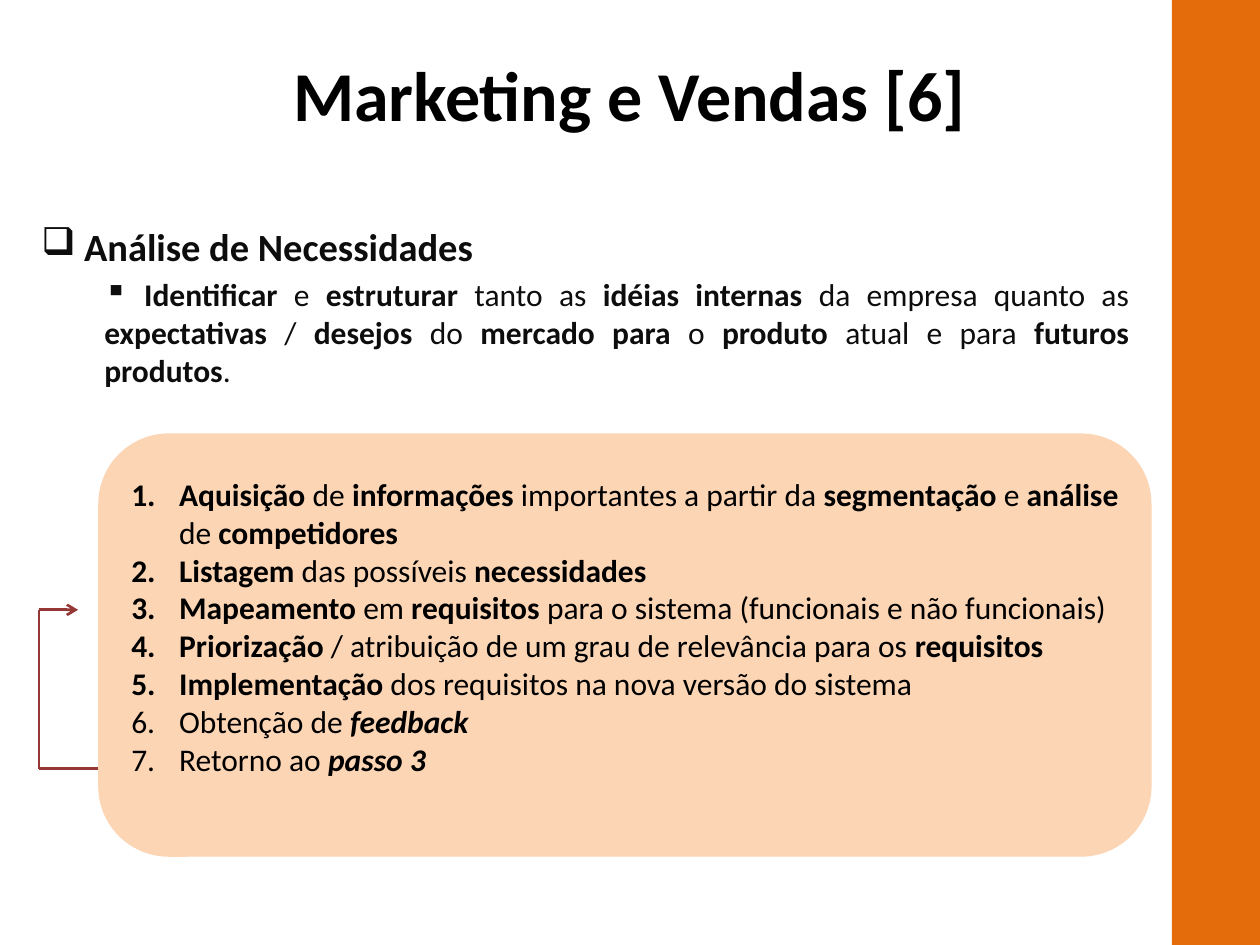
"""Builds the slide on needs analysis in marketing and sales."""
from lxml.etree import SubElement
from pptx import Presentation
from pptx.dml.color import RGBColor
from pptx.enum.shapes import MSO_CONNECTOR, MSO_SHAPE
from pptx.enum.text import MSO_ANCHOR, PP_ALIGN
from pptx.oxml.ns import qn
from pptx.util import Inches, Pt

COLORS = {"title": "000000", "body": "0D0D0D", "sidebar": "E46C0A",
          "panel": "FCD5B5", "loop": "953735"}


def write_rich(paragraph, text, size, color, italic=None):
    """Write text whose parts between asterisks are bold."""
    paragraph.alignment = PP_ALIGN.JUSTIFY
    paragraph.font.name = "Calibri"
    paragraph.font.size = Pt(size)
    paragraph.font.color.rgb = RGBColor.from_string(COLORS[color])
    for index, part in enumerate(text.split("*")):
        if part:
            run = paragraph.add_run()
            run.text = part
            run.font.name = "Calibri"
            run.font.size = Pt(size)
            run.font.color.rgb = RGBColor.from_string(COLORS[color])
            run.font.bold = index % 2 == 1
            run.font.italic = italic if index % 2 else None


def set_bullet(paragraph, tag, margin, indent, **attributes):
    """Give a paragraph its bullet and its indents in inches."""
    properties = paragraph._p.get_or_add_pPr()
    properties.set("marL", str(Inches(margin)))
    properties.set("indent", str(Inches(indent)))
    SubElement(properties, qn(tag), **attributes)


prs = Presentation()
prs.slide_width, prs.slide_height = Inches(10), Inches(7.5)
slide = prs.slides.add_slide(prs.slide_layouts[6])
shapes = slide.shapes

title = shapes.add_textbox(Inches(0.23), Inches(0.16), Inches(9.53), Inches(1.17)).text_frame
title.word_wrap = True
title.vertical_anchor = MSO_ANCHOR.MIDDLE
heading = title.paragraphs[0]
write_rich(heading, "*Marketing e Vendas [6]*", 40, "title")
heading.alignment = PP_ALIGN.CENTER

intro = shapes.add_textbox(Inches(0.23), Inches(1.72), Inches(8.83), Inches(1.5)).text_frame
intro.word_wrap = True
topic = intro.paragraphs[0]
write_rich(topic, "* Análise de Necessidades*", 22, "body")
set_bullet(topic, "a:buChar", 0, 0, char="❑")
goal = intro.add_paragraph()
goal.space_before = Pt(3.6)
write_rich(goal, " *Identificar* e *estruturar* tanto as *idéias internas* da empresa quanto as "
           "*expectativas* / *desejos* do *mercado para* o *produto* atual e para "
           "*futuros produtos*.", 18, "body")
set_bullet(goal, "a:buChar", 0.5, 0, char="▪")

sidebar = shapes.add_shape(MSO_SHAPE.RECTANGLE, Inches(9.3), 0, Inches(0.7), Inches(7.5))
panel = shapes.add_shape(MSO_SHAPE.ROUNDED_RECTANGLE, Inches(0.78), Inches(3.44),
                         Inches(8.36), Inches(3.36))
for block, color in ((sidebar, "sidebar"), (panel, "panel")):
    block.shadow.inherit = False
    block.fill.solid()
    block.fill.fore_color.rgb = RGBColor.from_string(COLORS[color])
    block.line.fill.background()

steps = [
    "*Aquisição* de *informações* importantes a partir da *segmentação* e *análise* "
    "de *competidores*",
    "*Listagem* das possíveis *necessidades*",
    "*Mapeamento* em *requisitos* para o sistema (funcionais e não funcionais)",
    "*Priorização* / atribuição de um grau de relevância para os *requisitos*",
    "*Implementação* dos requisitos na nova versão do sistema",
    "Obtenção de *feedback*",
    "Retorno ao *passo 3*",
]
process = panel.text_frame
process.word_wrap = True
process.vertical_anchor = MSO_ANCHOR.MIDDLE
process.margin_bottom = Inches(0.35)
for number, text in enumerate(steps, 1):
    step = process.paragraphs[0] if number == 1 else process.add_paragraph()
    write_rich(step, text, 18, "title", italic=number > 5)
    set_bullet(step, "a:buAutoNum", 0.38, -0.38, type="arabicPeriod")

loop_corners = [(0.78, 6.1), (0.31, 6.1), (0.31, 4.84), (0.62, 4.84)]
for start, end in zip(loop_corners, loop_corners[1:]):
    segment = shapes.add_connector(MSO_CONNECTOR.STRAIGHT,
                                   *(Inches(value) for value in start + end))
    segment.line.color.rgb = RGBColor.from_string(COLORS["loop"])
    segment.line.width = Pt(1.5)
    SubElement(segment._element.spPr, qn("a:effectLst"))
SubElement(segment.line._get_or_add_ln(), qn("a:tailEnd"), type="arrow")

prs.save("out.pptx")
